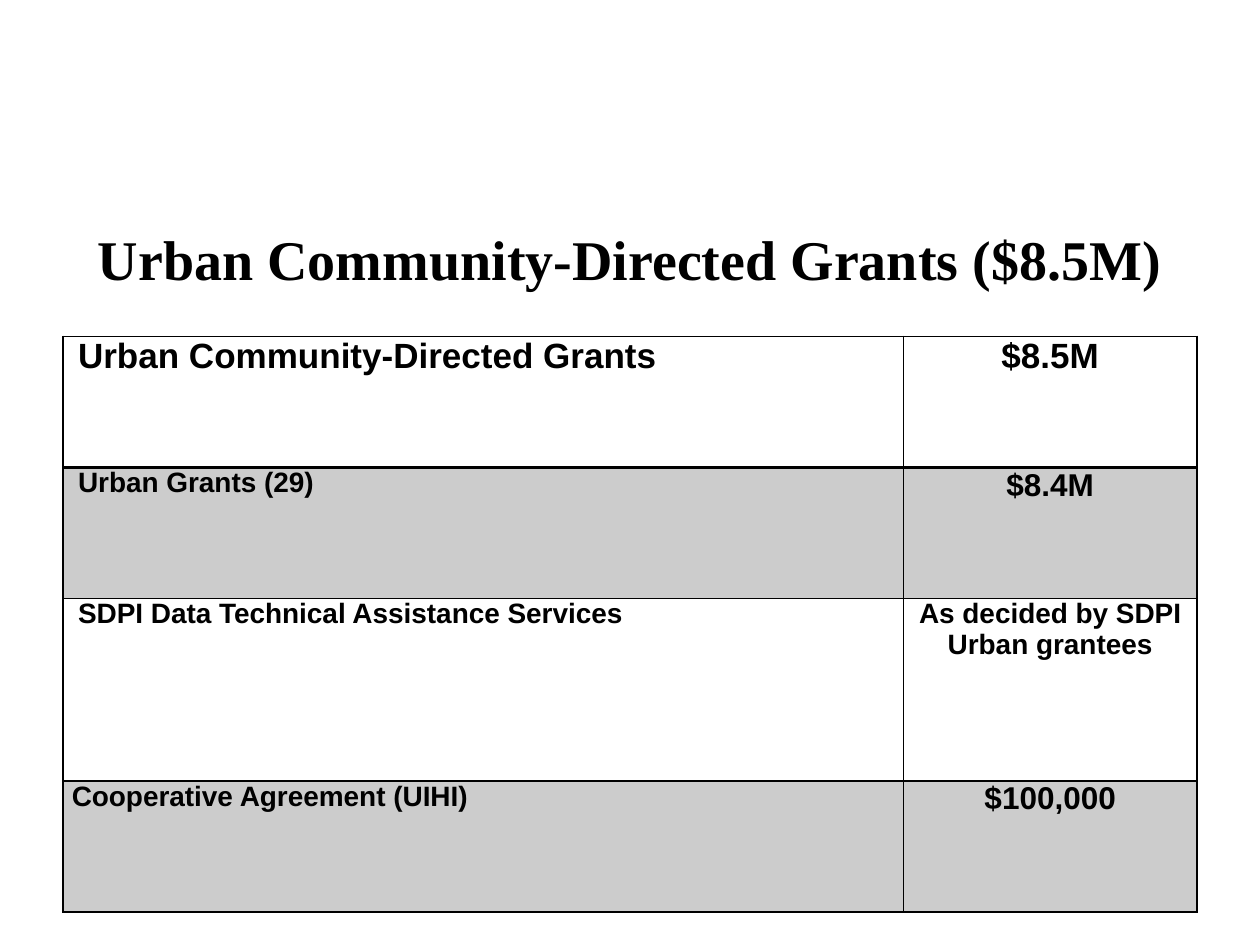
from lxml import etree
from pptx import Presentation, util as u
from pptx.dml.color import RGBColor
from pptx.enum import text
from pptx.oxml.ns import qn

BLACK = "000000"


def colour(value):
    return RGBColor.from_string(value)


class SlideBuilder:
    """Holds the style and the current slide; lengths are inches on a 10 by 7.5 grid."""

    title_font, body_font = "Times New Roman", "Arial"
    left, width = 0.5, 9

    def __init__(self, presentation):
        self.slide = presentation.slides.add_slide(presentation.slide_layouts[5])

    def style_runs(self, paragraph, font, size):
        for run in paragraph.runs:
            run.font.name = font
            run.font.size = u.Pt(size)
            run.font.bold = True
            run.font.color.rgb = colour(BLACK)

    def title(self, wording, top, height):
        shape = self.slide.shapes.title
        shape.left, shape.top = u.Inches(self.left), u.Inches(top)
        shape.width, shape.height = u.Inches(self.width), u.Inches(height)
        frame = shape.text_frame
        frame.text = wording
        frame.word_wrap = True
        frame.vertical_anchor = text.MSO_ANCHOR.MIDDLE
        frame.paragraphs[0].alignment = text.PP_ALIGN.CENTER
        self.style_runs(frame.paragraphs[0], self.title_font, 32)

    def table(self, rows, top, column_widths, row_heights):
        table = self.slide.shapes.add_table(
            len(rows), len(column_widths), u.Inches(self.left), u.Inches(top),
            u.Inches(self.width), u.Inches(sum(row_heights))).table
        table.first_row = table.horz_banding = False
        for column, width in zip(table.columns, column_widths):
            column.width = u.Inches(width)
        for row, height in zip(table.rows, row_heights):
            row.height = u.Inches(height)
        for r, row in enumerate(rows):
            for c, (wording, size, indent) in enumerate(row):
                cell = table.cell(r, c)
                self.cell_text(cell, wording, size, indent, centred=c == 1)
                self.cell_fill(cell, shaded=r % 2 == 1)
                self.cell_borders(cell, top=2 if r == 1 else 1, bottom=2 if r == 0 else 1)

    def cell_text(self, cell, wording, size, indent, centred):
        cell.margin_left = cell.margin_right = u.Inches(0.07)
        cell.margin_top = cell.margin_bottom = 0
        cell.text_frame.text = wording
        paragraph = cell.text_frame.paragraphs[0]
        paragraph.alignment = text.PP_ALIGN.CENTER if centred else text.PP_ALIGN.LEFT
        properties = paragraph._p.get_or_add_pPr()
        properties.set("marL", "0")
        properties.set("indent", str(u.Inches(indent)))
        self.style_runs(paragraph, self.body_font, size)

    def cell_fill(self, cell, shaded):
        if not shaded:
            cell.fill.background()
            return
        cell.fill.solid()
        cell.fill.fore_color.rgb = colour(BLACK)
        fill_colour = cell._tc.tcPr.find(".//" + qn("a:srgbClr"))
        etree.SubElement(fill_colour, qn("a:alpha"), val="20000")

    def cell_borders(self, cell, top, bottom):
        # Borders must come before the fill in the cell properties
        sides = (("a:lnL", 1), ("a:lnR", 1), ("a:lnT", top), ("a:lnB", bottom))
        for position, (side, points) in enumerate(sides):
            line = etree.Element(qn(side), w=str(u.Pt(points)))
            fill = etree.SubElement(line, qn("a:solidFill"))
            etree.SubElement(fill, qn("a:srgbClr"), val=BLACK)
            cell._tc.tcPr.insert(position, line)


def main():
    presentation = Presentation()
    presentation.slide_width, presentation.slide_height = u.Inches(10), u.Inches(7.5)
    builder = SlideBuilder(presentation)

    # Title
    builder.title("Urban Community-Directed Grants ($8.5M)", top=1.42, height=1.25)

    # Funding table: wording, size, first-line indent
    label, amount = 0.05, -0.14
    rows = [
        [("Urban Community-Directed Grants", 20, label), ("$8.5M", 20, amount)],
        [("Urban Grants (29)", 16, label), ("$8.4M", 18, amount)],
        [("SDPI Data Technical Assistance Services", 16, label),
         ("As decided by SDPI Urban grantees", 16, amount)],
        [("Cooperative Agreement (UIHI)", 16, 0), ("$100,000", 18, amount)],
    ]
    builder.table(rows, top=2.67, column_widths=(6.67, 2.33),
                  row_heights=(1.04, 1.04, 1.45, 1.04))

    presentation.save("out.pptx")


if __name__ == "__main__":
    main()
